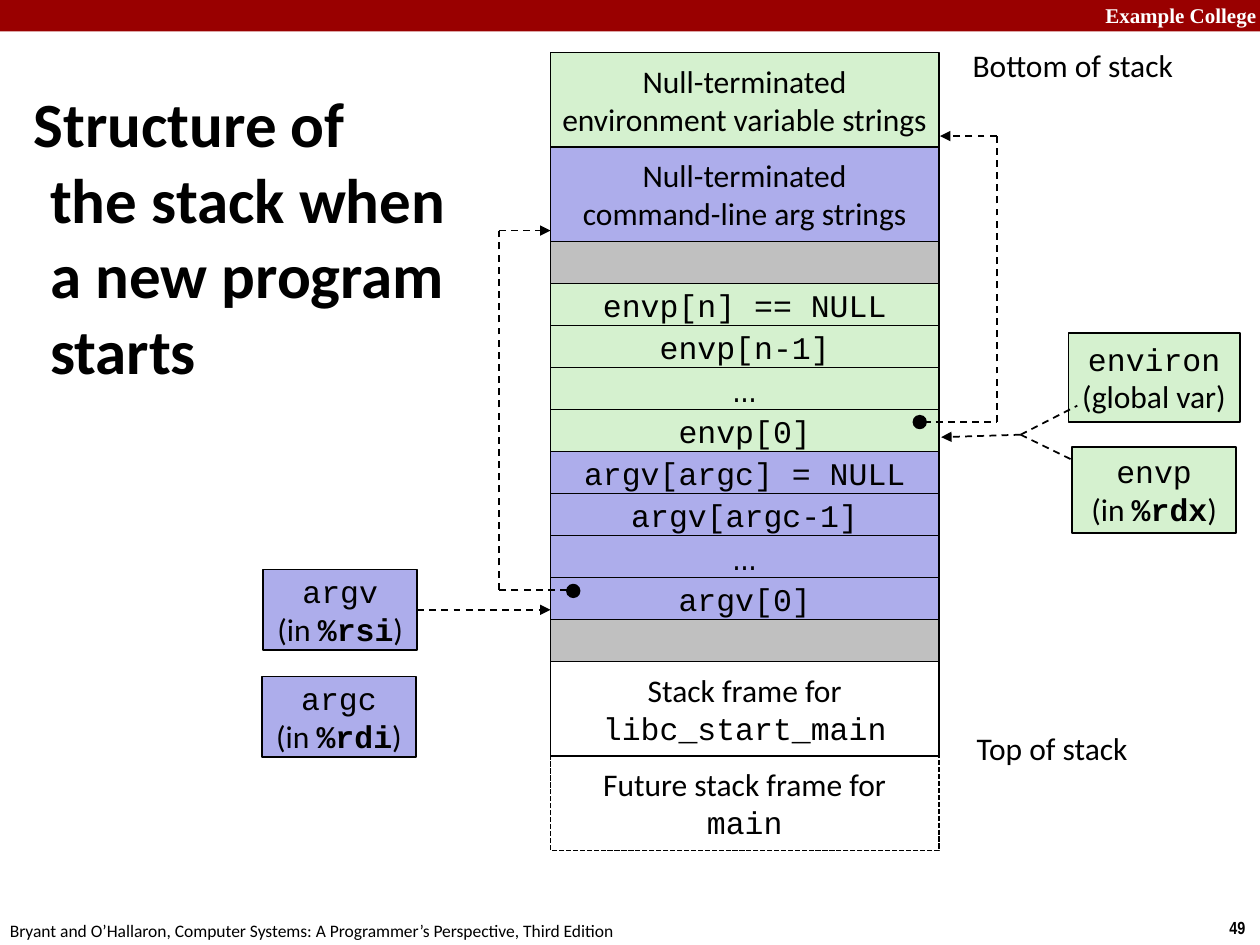
from lxml.etree import SubElement
from pptx import Presentation
from pptx.dml.color import RGBColor
from pptx.enum.dml import MSO_LINE
from pptx.enum.shapes import MSO_CONNECTOR, MSO_SHAPE
from pptx.enum.text import MSO_ANCHOR, PP_ALIGN
from pptx.oxml.ns import qn
from pptx.util import Inches, Pt

SANS, CODE, THIN = "Calibri", "Courier New", "Arial Narrow"
GREEN, BLUE, GRAY, BLACK = "D5F1CF", "ADADEB", "C0C0C0", "000000"
LEFT, TOP, WIDE, TALL, ROW = 4.37, 5 / 12, 3.08, 0.75, 1 / 3
DASH, DOTS = MSO_LINE.DASH, MSO_LINE.SQUARE_DOT


def sans(text):
    return [(text, SANS, False)]


def code(text):
    return [(text, CODE, False)]


def held(name, reg):
    return [code(name), sans("(in ") + [(reg, CODE, True)] + sans(")")]


MORE = [[("...", THIN, False)]]
STACK = [
    (TALL, GREEN, [sans("Null-terminated"), sans("environment variable strings")]),
    (TALL, BLUE, [sans("Null-terminated"), sans("command-line arg strings")]),
    (ROW, GRAY, []),
    (ROW, GREEN, [code("envp[n] == NULL")]),
    (ROW, GREEN, [code("envp[n-1]")]),
    (ROW, GREEN, MORE),
    (ROW, GREEN, [code("envp[0]")]),
    (ROW, BLUE, [code("argv[argc] = NULL")]),
    (ROW, BLUE, [code("argv[argc-1]")]),
    (ROW, BLUE, MORE),
    (ROW, BLUE, [code("argv[0]")]),
    (ROW, GRAY, []),
    (TALL, None, [sans("Stack frame for"), code("libc_start_main")]),
    (TALL, None, [sans("Future stack frame for"), code("main")]),
]
VARS = {
    "environ": ((8.48, 2.64, 1.36, 0.71), GREEN, [code("environ"), sans("(global var)")]),
    "envp": ((8.51, 3.55, 1.3, 0.68), GREEN, held("envp", "%rdx")),
    "argv": ((2.09, 4.52, 1.22, 0.64), BLUE, held("argv", "%rsi")),
    "argc": ((2.08, 5.37, 1.22, 0.64), BLUE, held("argc", "%rdi")),
}
LINES = [
    ((4.5, 4.68), (3.96, 4.68), False),
    ((3.96, 4.68), (3.96, 1.83), False),
    ((3.96, 1.83), (LEFT, 1.83), True),
    ((7.33, 3.35), (7.91, 3.35), False),
    ((7.91, 3.35), (7.91, 1.08), False),
    ((7.91, 1.08), (7.46, 1.08), True),
    ((8.1, 3.45), (8.51, 3.65), False),
    ((8.1, 3.45), (8.55, 3.22), False),
    ((8.1, 3.45), (7.47, 3.47), True),
]
DOT = [(4.5, 4.64), (7.25, 3.3)]
LABELS = [
    ((8.64, -0.03, 1.43, 0.3), "Example College", "Times New Roman", 12, True, "FFFFFF", PP_ALIGN.RIGHT),
    ((9.66, 7.23, 0.34, 0.27), "49", THIN, 10, True, BLACK, PP_ALIGN.LEFT),
    ((-0.02, 7.25, 5.08, 0.27),
     "Bryant and O’Hallaron, Computer Systems: A Programmer’s Perspective, Third Edition",
     SANS, 10, False, BLACK, PP_ALIGN.LEFT),
    ((7.6, 0.32, 1.83, 0.4), "Bottom of stack", SANS, 18, False, BLACK, PP_ALIGN.CENTER),
    ((7.63, 5.74, 1.44, 0.4), "Top of stack", SANS, 18, False, BLACK, PP_ALIGN.CENTER),
]


def tint(text):
    return RGBColor.from_string(text)


def style(font, name, size, bold, color=BLACK):
    font.name, font.size, font.bold = name, Pt(size), bold
    font.color.rgb = tint(color)


def shape(slide, kind, area, fill, edge=BLACK):
    item = slide.shapes.add_shape(kind, *map(Inches, area))
    item.shadow.inherit = False
    if fill:
        item.fill.solid()
        item.fill.fore_color.rgb = tint(fill)
    else:
        item.fill.background()
    if edge:
        item.line.color.rgb = tint(edge)
        item.line.width = Pt(1)
    else:
        item.line.fill.background()
    return item


def box(slide, area, fill, paras):
    item = shape(slide, MSO_SHAPE.RECTANGLE, area, fill)
    frame = item.text_frame
    frame.word_wrap = False
    frame.vertical_anchor = MSO_ANCHOR.MIDDLE
    for i, runs in enumerate(paras):
        para = frame.add_paragraph() if i else frame.paragraphs[0]
        para.alignment = PP_ALIGN.CENTER
        name = runs[0][1]
        style(para.font, name, 20 if name == THIN else 18, False)
        for text, face, bold in runs:
            run = para.add_run()
            run.text = text
            if len(runs) > 1:
                run.font.name, run.font.bold = face, bold
    return item


def label(slide, area, text, name, size, bold, color, align):
    frame = slide.shapes.add_textbox(*map(Inches, area)).text_frame
    frame.word_wrap = False
    para = frame.paragraphs[0]
    para.text, para.alignment = text, align
    style(para.font, name, size, bold, color)
    return frame


def link(slide, start, end, arrow):
    item = slide.shapes.add_connector(MSO_CONNECTOR.STRAIGHT, *map(Inches, start + end))
    item.line.color.rgb = tint(BLACK)
    item.line.width, item.line.dash_style = Pt(1), DASH
    if arrow:
        SubElement(item.line._get_or_add_ln(), qn("a:tailEnd"), type="triangle")
    SubElement(item._element.spPr, qn("a:effectLst"))
    return item


def main():
    """Build the slide on the stack of a new program."""
    deck = Presentation()
    deck.slide_width, deck.slide_height = Inches(10), Inches(7.5)
    slide = deck.slides.add_slide(deck.slide_layouts[6])
    shape(slide, MSO_SHAPE.RECTANGLE, (0, 0, 10, 0.25), "990000", None)

    title = label(slide, (0.17, 0.83, 3.57, 2.08),
                  "Structure of \vthe stack when a new program starts",
                  SANS, 36, True, BLACK, PP_ALIGN.LEFT)
    title.word_wrap, title.vertical_anchor = True, MSO_ANCHOR.MIDDLE
    props = title.paragraphs[0]._p.get_or_add_pPr()
    props.set("marL", str(Inches(0.13)))
    props.set("indent", str(Inches(-0.13)))

    top = TOP
    for high, fill, paras in STACK:
        last = box(slide, (LEFT, top, WIDE, high), fill, paras)
        top += high
    last.line.dash_style = DOTS

    made = {name: box(slide, *data) for name, data in VARS.items()}
    for data in LINES:
        link(slide, *data)
    link(slide, (3.31, 4.84), (LEFT, 4.84), True).begin_connect(made["argv"], 3)
    for x, y in DOT:
        shape(slide, MSO_SHAPE.OVAL, (x, y, 0.1, 0.1), BLACK)
    for data in LABELS:
        label(slide, *data)
    deck.save("out.pptx")


if __name__ == "__main__":
    main()
